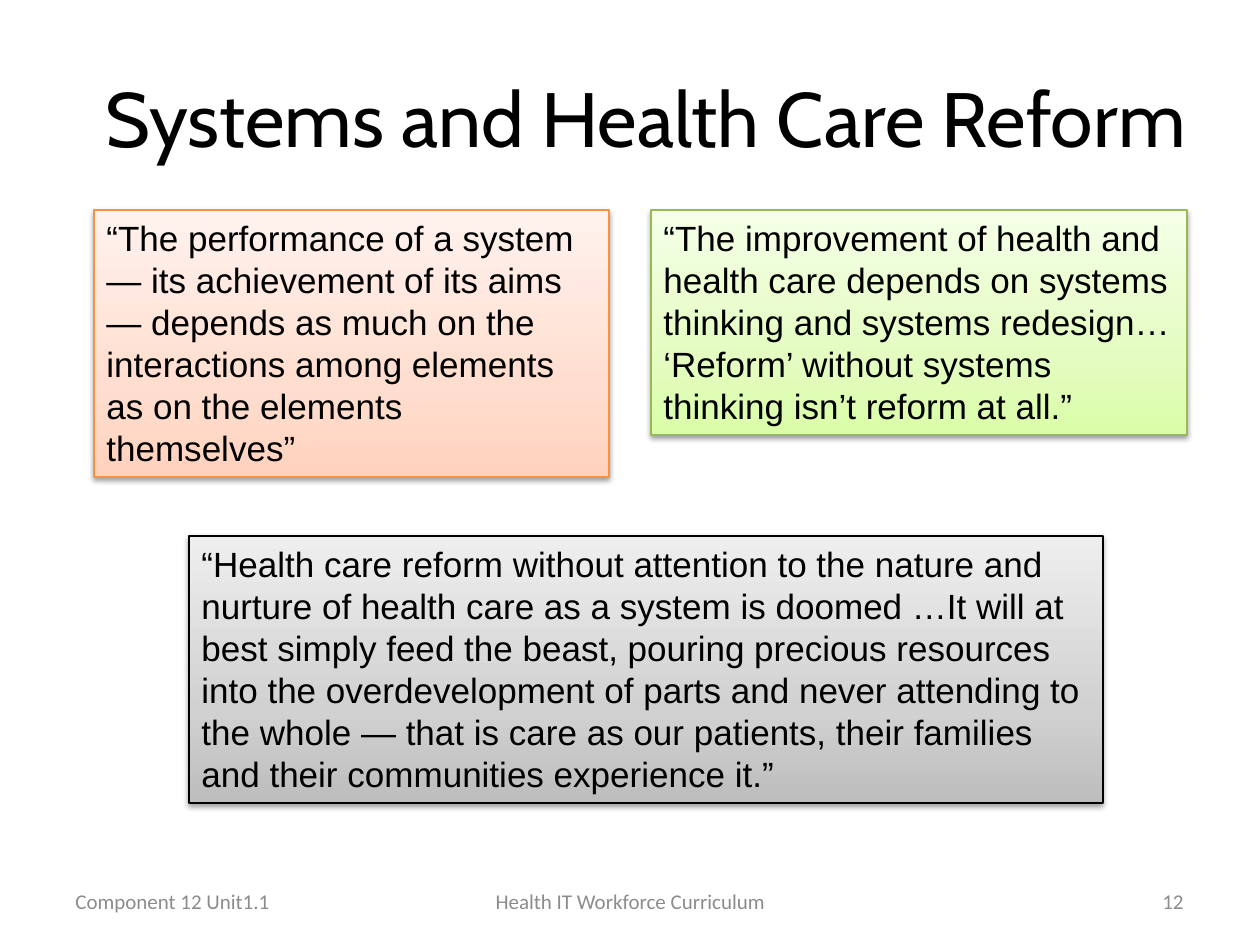
from dataclasses import dataclass

from lxml import etree
from pptx import Presentation
from pptx.dml.color import RGBColor
from pptx.enum.shapes import MSO_SHAPE
from pptx.enum.text import MSO_ANCHOR, MSO_AUTO_SIZE, PP_ALIGN
from pptx.oxml import parse_xml
from pptx.oxml.ns import nsdecls, qn
from pptx.util import Emu, Pt

RECT = MSO_SHAPE.RECTANGLE
TOP, MIDDLE = MSO_ANCHOR.TOP, MSO_ANCHOR.MIDDLE
LEFT, CENTER, RIGHT = PP_ALIGN.LEFT, PP_ALIGN.CENTER, PP_ALIGN.RIGHT
FIXED = MSO_AUTO_SIZE.NONE
SCALE = 914400 / 126


@dataclass(frozen=True)
class Theme:
    title: tuple = ("Cabin", 44, "000000")
    quote: tuple = ("Arial", 20, "000000")
    foot: tuple = ("Calibri", 12, "8C8C8C")
    stops: tuple = (0, 35, 100)
    # Line colour, then the gradient from bottom to top
    orange: tuple = ("F69240", "FFD2BD", "FFDED0", "FFF2ED")
    gray: tuple = ("000000", "BDBDBD", "D1D1D1", "EEEEEE")
    green: tuple = ("98B955", "DAFDA7", "E4FCC2", "F5FFE7")


THEME = Theme()

QUOTES = (
    ((94, 210, 515, 267), THEME.orange,
     "“The performance of a system — its achievement of its aims — depends "
     "as much on the interactions among elements as on the elements "
     "themselves”"),
    ((189, 536, 914, 267), THEME.gray,
     "“Health care reform without attention to the nature and nurture of "
     "health care as a system is doomed …It will at best simply feed the "
     "beast, pouring precious resources into the overdevelopment of parts "
     "and never attending to the whole — that is care as our patients, their "
     "families and their communities experience it.”"),
    ((651, 210, 536, 225), THEME.green,
     "“The improvement of health and health care depends on systems thinking "
     "and systems redesign… ‘Reform’ without systems thinking isn’t reform "
     "at all.”"),
)

FOOTS = (
    (63, 293, LEFT, "Component 12 Unit1.1"),
    (903, 293, RIGHT, "12"),
    (431, 399, CENTER, "Health IT Workforce Curriculum"),
)


def px(n):
    return Emu(round(n * SCALE))


def apply(item, values):
    for name, value in values.items():
        setattr(item, name, value)


def write(shape, text, style, align=LEFT, anchor=MIDDLE):
    face, size, color = style
    frame = shape.text_frame
    apply(frame, {"word_wrap": True, "auto_size": FIXED,
                  "vertical_anchor": anchor})
    para = frame.paragraphs[0]
    para.alignment = align
    run = para.add_run()
    run.text = text
    apply(run.font, {"name": face, "size": Pt(size)})
    run.font.color.rgb = RGBColor.from_string(color)


def add_text(slide, box, *args):
    write(slide.shapes.add_textbox(*map(px, box)), *args)


def shade(shape, colors):
    """Fill with a gradient that rises from the bottom edge."""
    shape.fill.gradient()
    shape.fill.gradient_angle = 90
    stops = next(shape._element.spPr.iter(qn("a:gsLst")))
    for old in list(stops):
        stops.remove(old)
    for place, color in zip(THEME.stops, colors):
        stop = etree.SubElement(stops, qn("a:gs"), pos=str(place * 1000))
        etree.SubElement(stop, qn("a:srgbClr"), val=color)


def cast(shape):
    """Give the shape a soft shadow straight below."""
    shape.shadow.inherit = False
    shape._element.spPr.find(qn("a:effectLst")).append(parse_xml(
        f'<a:outerShdw {nsdecls("a")} blurRad="{Pt(3.1)}" dist="{Pt(1.6)}" '
        'dir="5400000" rotWithShape="0"><a:srgbClr val="000000">'
        '<a:alpha val="38000"/></a:srgbClr></a:outerShdw>'))


def add_quote(slide, box, tones, text):
    shape = slide.shapes.add_shape(RECT, *map(px, box))
    edge, *colors = tones
    shade(shape, colors)
    shape.line.color.rgb = RGBColor.from_string(edge)
    shape.line.width = Pt(0.75)
    cast(shape)
    write(shape, text, THEME.quote, LEFT, TOP)


def main():
    deck = Presentation()
    apply(deck, {"slide_width": px(1260), "slide_height": px(945)})
    slide = deck.slides.add_slide(deck.slide_layouts[6])
    add_text(slide, (63, 38, 1166, 158), "Systems and Health Care Reform",
             THEME.title, CENTER)
    for quote in QUOTES:
        add_quote(slide, *quote)
    for left, width, align, text in FOOTS:
        add_text(slide, (left, 876, width, 50), text, THEME.foot, align)
    deck.save("out.pptx")


if __name__ == "__main__":
    main()
